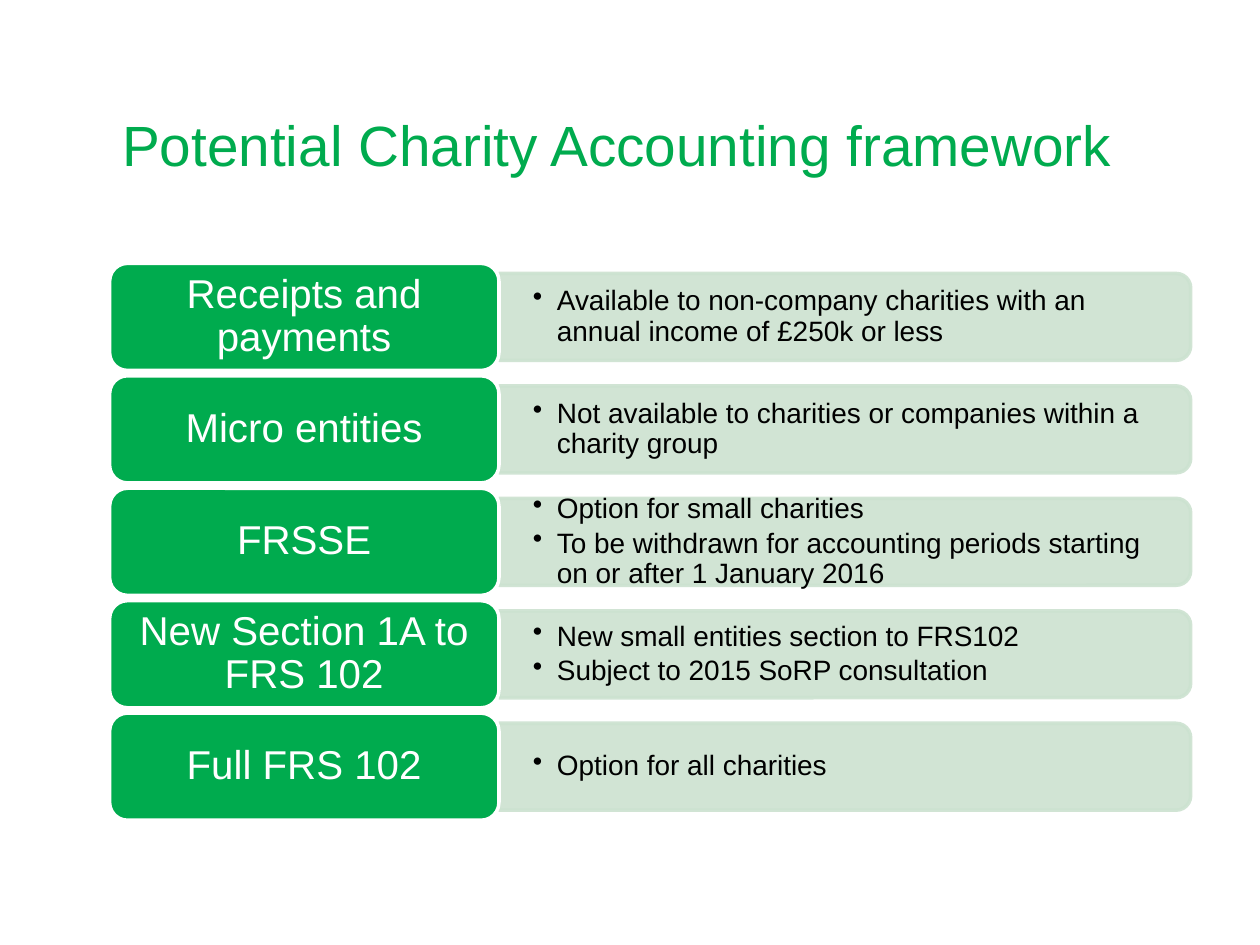
from lxml.etree import SubElement
from pptx import Presentation
from pptx.dml.color import RGBColor
from pptx.enum.shapes import MSO_SHAPE as Shape
from pptx.enum.text import MSO_ANCHOR as Anchor, MSO_AUTO_SIZE as AutoSize, PP_ALIGN as Align
from pptx.oxml.ns import qn
from pptx.util import Inches, Pt

GREEN, PALE_GREEN, WHITE, BLACK = "00AB4E", "CCE2D0", "FFFFFF", "000000"
LABEL_WIDTH = 3.09
ROW_HEIGHT = 0.85
ROW_PITCH = ROW_HEIGHT * 1.05
BAND_HEIGHT = 0.69

FRAMEWORKS = [
    ("Receipts and payments",
     ["Available to non-company charities with an annual income of £250k or less"]),
    ("Micro entities",
     ["Not available to charities or companies within a charity group"]),
    ("FRSSE",
     ["Option for small charities",
      "To be withdrawn for accounting periods starting on or after 1 January 2016"]),
    ("New Section 1A to FRS 102",
     ["New small entities section to FRS102",
      "Subject to 2015 SoRP consultation"]),
    ("Full FRS 102", ["Option for all charities"]),
]


def color(hex_value):
    return RGBColor.from_string(hex_value)


def set_all(target, values):
    for name, value in values.items():
        setattr(target, name, value)


def set_frame(frame, inset_x, inset_y, anchor=Anchor.MIDDLE):
    set_all(frame, {
        "word_wrap": True, "auto_size": AutoSize.NONE, "vertical_anchor": anchor,
        "margin_left": Inches(inset_x), "margin_right": Inches(inset_x),
        "margin_top": Inches(inset_y), "margin_bottom": Inches(inset_y),
    })


def write(paragraph, text, size, hex_value, **layout):
    paragraph.text = text
    set_all(paragraph, layout)
    set_all(paragraph.font, {"name": "Arial", "size": Pt(size)})
    paragraph.font.color.rgb = color(hex_value)


def add_panel(slide, preset, left, top, width, height, fill, line):
    panel = slide.shapes.add_shape(
        preset, Inches(left), Inches(top), Inches(width), Inches(height))
    panel.shadow.inherit = False
    panel.fill.solid()
    panel.fill.fore_color.rgb = color(fill)
    panel.line.color.rgb = color(line)
    panel.line.width = Pt(2)
    return panel


def add_bullet(paragraph):
    properties = paragraph._p.get_or_add_pPr()
    properties.set("marL", str(Inches(0.19)))
    properties.set("indent", str(-Inches(0.19)))
    SubElement(properties, qn("a:buChar"), char="•")


def add_title(slide, left, top, width, height):
    title = slide.shapes.title
    set_all(title, {"left": Inches(left), "top": Inches(top),
                    "width": Inches(width), "height": Inches(height)})
    set_frame(title.text_frame, 0.1, 0.05, Anchor.BOTTOM)
    write(title.text_frame.paragraphs[0], "Potential Charity Accounting framework",
          32.4, GREEN, alignment=Align.LEFT)


def add_details(slide, points, left, top, width, height):
    """Pale band, rounded on its right side only, with bullets over it."""
    # The upright shape is as wide as the band is high, then turned a quarter.
    band = add_panel(slide, Shape.ROUND_2_SAME_RECTANGLE,
                     left + (width - height) / 2, top + (height - width) / 2,
                     height, width, PALE_GREEN, PALE_GREEN)
    band.rotation = 90
    for tint in band._element.spPr.iter(qn("a:srgbClr")):
        SubElement(tint, qn("a:alpha"), val="90000")

    frame = slide.shapes.add_textbox(
        Inches(left), Inches(top), Inches(width), Inches(height)).text_frame
    set_frame(frame, 0.27, 0.14)
    for index, point in enumerate(points):
        paragraph = frame.add_paragraph() if index else frame.paragraphs[0]
        add_bullet(paragraph)
        write(paragraph, point, 16, BLACK, line_spacing=0.9, space_after=Pt(2.4))


def add_framework(slide, label, points, left, top, width):
    add_details(slide, points, left + LABEL_WIDTH,
                top + (ROW_HEIGHT - BAND_HEIGHT) / 2, width - LABEL_WIDTH, BAND_HEIGHT)
    block = add_panel(slide, Shape.ROUNDED_RECTANGLE, left, top,
                      LABEL_WIDTH, ROW_HEIGHT, GREEN, WHITE)
    set_frame(block.text_frame, 0.1, 0.05)
    write(block.text_frame.paragraphs[0], label, 23, WHITE,
          alignment=Align.CENTER, line_spacing=0.9)


def main():
    presentation = Presentation()
    presentation.slide_width, presentation.slide_height = Inches(10), Inches(7.5)
    slide = presentation.slides.add_slide(presentation.slide_layouts[5])
    add_title(slide, 0.87, 0.31, 9, 1.15)
    for row, (label, points) in enumerate(FRAMEWORKS):
        add_framework(slide, label, points, 0.87, 2.09 + row * ROW_PITCH, 8.58)
    presentation.save("out.pptx")


if __name__ == "__main__":
    main()
